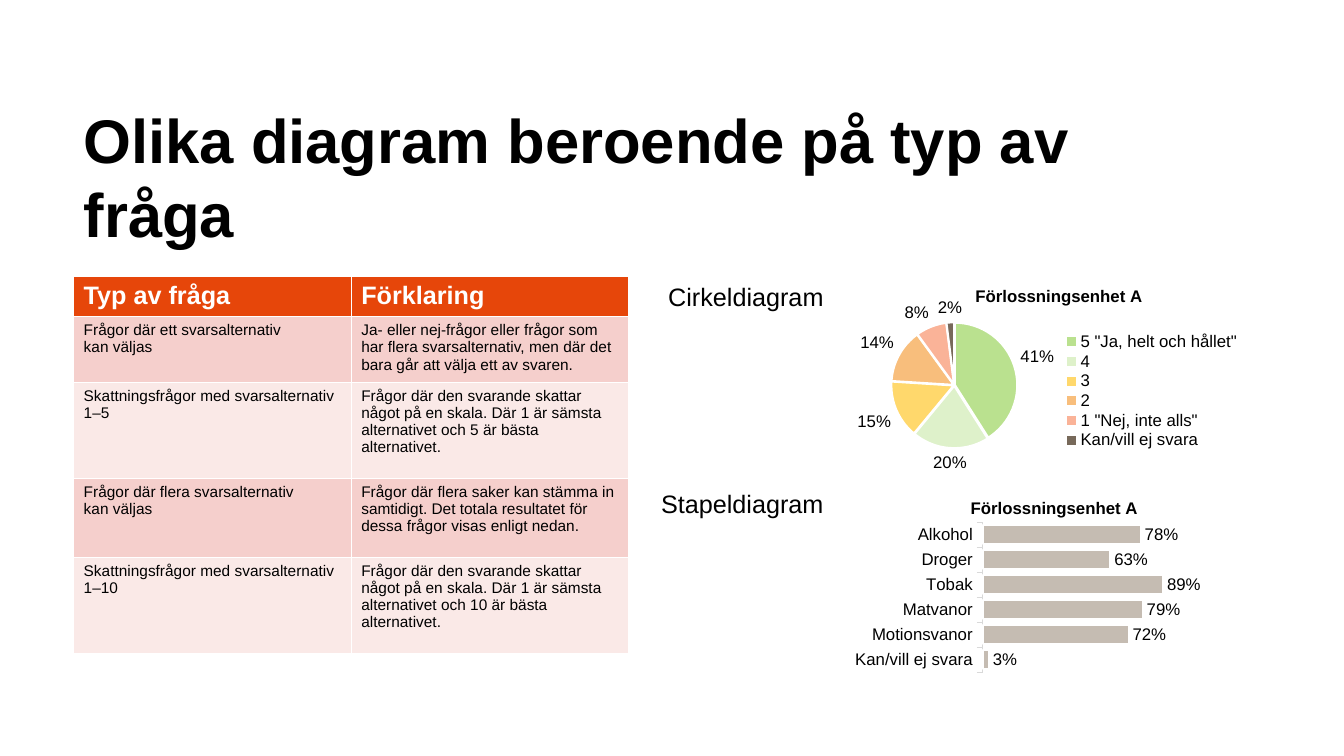
from lxml import etree
from pptx import Presentation
from pptx.chart.data import CategoryChartData
from pptx.dml.color import RGBColor
from pptx.enum import chart as ch
from pptx.util import Pt

UNIT = "Förlossningsenhet A"
C = "{http://schemas.openxmlformats.org/drawingml/2006/chart}"


def style(font, size, color="000000", bold=False):
    for name, value in {"name": "Arial", "size": Pt(size), "bold": bold}.items():
        setattr(font, name, value)
    font.color.rgb = RGBColor.from_string(color)


def place(element, after, inner=False, **box):
    """Give a chart part a manual layout, as fractions of the chart."""
    for old in element.findall(C + "layout"):
        element.remove(old)
    layout = etree.Element(C + "layout")
    manual = etree.SubElement(layout, C + "manualLayout")
    if inner:
        etree.SubElement(manual, C + "layoutTarget", val="inner")
    for mode in ("xMode", "yMode"):
        etree.SubElement(manual, C + mode, val="edge")
    for side, share in box.items():
        etree.SubElement(manual, C + side, val=str(share))
    if after:
        element.find(C + after).addnext(layout)
    else:
        element.insert(0, layout)


prs = Presentation()
prs.slide_width, prs.slide_height = Pt(960), Pt(540)
slide = prs.slides.add_slide(prs.slide_layouts[6])

# Heading and chart captions
for words, left, top, width, height, size, bold, wrap in [
    ("Olika diagram beroende på typ av fråga", 52.6, 69.1, 756.7, 97.2, 44, True, True),
    ("Cirkeldiagram", 470.2, 197.3, 131.8, 29, 18, False, False),
    ("Stapeldiagram", 465.1, 344.9, 136.8, 29, 18, False, False),
]:
    frame = slide.shapes.add_textbox(Pt(left), Pt(top), Pt(width), Pt(height)).text_frame
    frame.word_wrap = wrap
    frame.text = words
    style(frame.paragraphs[0].runs[0].font, size, bold=bold)

# Question types
questions = [
    ("Typ av fråga", "Förklaring"),
    ("Frågor där ett svarsalternativ\nkan väljas",
     "Ja- eller nej-frågor eller frågor som har flera svarsalternativ, "
     "men där det bara går att välja ett av svaren."),
    ("Skattningsfrågor med svarsalternativ 1–5",
     "Frågor där den svarande skattar något på en skala. "
     "Där 1 är sämsta alternativet och 5 är bästa alternativet."),
    ("Frågor där flera svarsalternativ\nkan väljas",
     "Frågor där flera saker kan stämma in samtidigt. "
     "Det totala resultatet för dessa frågor visas enligt nedan."),
    ("Skattningsfrågor med svarsalternativ 1–10",
     "Frågor där den svarande skattar något på en skala. "
     "Där 1 är sämsta alternativet och 10 är bästa alternativet."),
]
row_heights = [29, 43.8, 68.5, 56.5, 68.5]
table = slide.shapes.add_table(
    len(questions), 2, Pt(52.6), Pt(197.3), Pt(396.6), Pt(sum(row_heights))).table
for r, (row, height) in enumerate(zip(questions, row_heights)):
    table.rows[r].height = Pt(height)
    fill = "E6460A" if r == 0 else ("FAE9E7", "F5CFCC")[r % 2]
    for c, words in enumerate(row):
        cell = table.cell(r, c)
        cell.fill.solid()
        cell.fill.fore_color.rgb = RGBColor.from_string(fill)
        cell.text = words
        for paragraph in cell.text_frame.paragraphs:
            if r == 0:
                style(paragraph.runs[0].font, 18, "FFFFFF", True)
            else:
                style(paragraph.runs[0].font, 11)

# Pie and bar charts
answers = {'5 "Ja, helt och hållet"': 0.41, "4": 0.2, "3": 0.15, "2": 0.14,
           '1 "Nej, inte alls"': 0.08, "Kan/vill ej svara": 0.02}
topics = {"Kan/vill ej svara": 0.03, "Motionsvanor": 0.72, "Matvanor": 0.79,
          "Tobak": 0.89, "Droger": 0.63, "Alkohol": 0.78}
charts = []
for kind, shares, area, title_at, plot_at in [
    (ch.XL_CHART_TYPE.PIE, answers, (601.2, 197.3, 291.6, 150.5),
     {"x": 0.32, "y": 0.03}, {"x": 0.117, "y": 0.219, "w": 0.318, "h": 0.598}),
    (ch.XL_CHART_TYPE.BAR_CLUSTERED, topics, (547.2, 347.8, 360, 139),
     {"x": 0.4, "y": 0.04}, {"x": 0.43, "y": 0.182, "w": 0.402, "h": 0.771}),
]:
    data = CategoryChartData(number_format="0%")
    data.categories = list(shares)
    data.add_series(UNIT, list(shares.values()))
    chart = slide.shapes.add_chart(kind, *map(Pt, area), data).chart
    style(chart.font, 10)
    chart.has_title = True
    heading = chart.chart_title.text_frame
    heading.text = UNIT
    style(heading.paragraphs[0].runs[0].font, 12, bold=True)
    title = chart.chart_title._element
    place(title, "tx", **title_at)
    place(title.getparent().find(C + "plotArea"), None, inner=True, **plot_at)

    plot = chart.plots[0]
    plot.has_data_labels = True
    labels = plot.data_labels
    for name, value in {"show_value": True, "show_percentage": False,
                        "number_format": "0%", "number_format_is_linked": False,
                        "position": ch.XL_LABEL_POSITION.OUTSIDE_END}.items():
        setattr(labels, name, value)
    style(labels.font, 12)
    line = plot.series[0].format.line
    line.color.rgb = RGBColor.from_string("FFFFFF")
    line.width = Pt(1.5)
    charts.append(chart)

pie, bars = charts
pie.plots[0].vary_by_categories = True
slices = pie.plots[0].series[0]
for i, color in enumerate(["BAE18F", "DEF1CA", "FFD86C", "F8BE7C", "FAB398", "77695A"]):
    part = slices.points[i].format
    part.fill.solid()
    part.fill.fore_color.rgb = RGBColor.from_string(color)
    part.line.color.rgb = RGBColor.from_string("FFFFFF")
    part.line.width = Pt(1.5)
explosion = etree.Element(C + "explosion", val="1")
slices._element.find(C + "dPt").addprevious(explosion)
pie.has_legend = True
pie.legend.position = ch.XL_LEGEND_POSITION.BOTTOM
pie.legend.include_in_layout = False
style(pie.legend.font, 12)
place(pie.legend._element, "legendPos", x=0.53, y=0.26, w=0.46, h=0.57)

bars.has_legend = False
bars.plots[0].vary_by_categories = False
bars.plots[0].gap_width = 30
bar_fill = bars.plots[0].series[0].format.fill
bar_fill.solid()
bar_fill.fore_color.rgb = RGBColor.from_string("C5BCB2")
topic_axis, share_axis = bars.category_axis, bars.value_axis
topic_axis.major_tick_mark = ch.XL_TICK_MARK.OUTSIDE
topic_axis.format.line.color.rgb = RGBColor.from_string("D9D9D9")
topic_axis.format.line.width = Pt(0.75)
style(topic_axis.tick_labels.font, 12)
share_axis.visible = False
share_axis.has_major_gridlines = False
share_axis.minimum_scale, share_axis.maximum_scale = 0, 1

prs.save("out.pptx")
